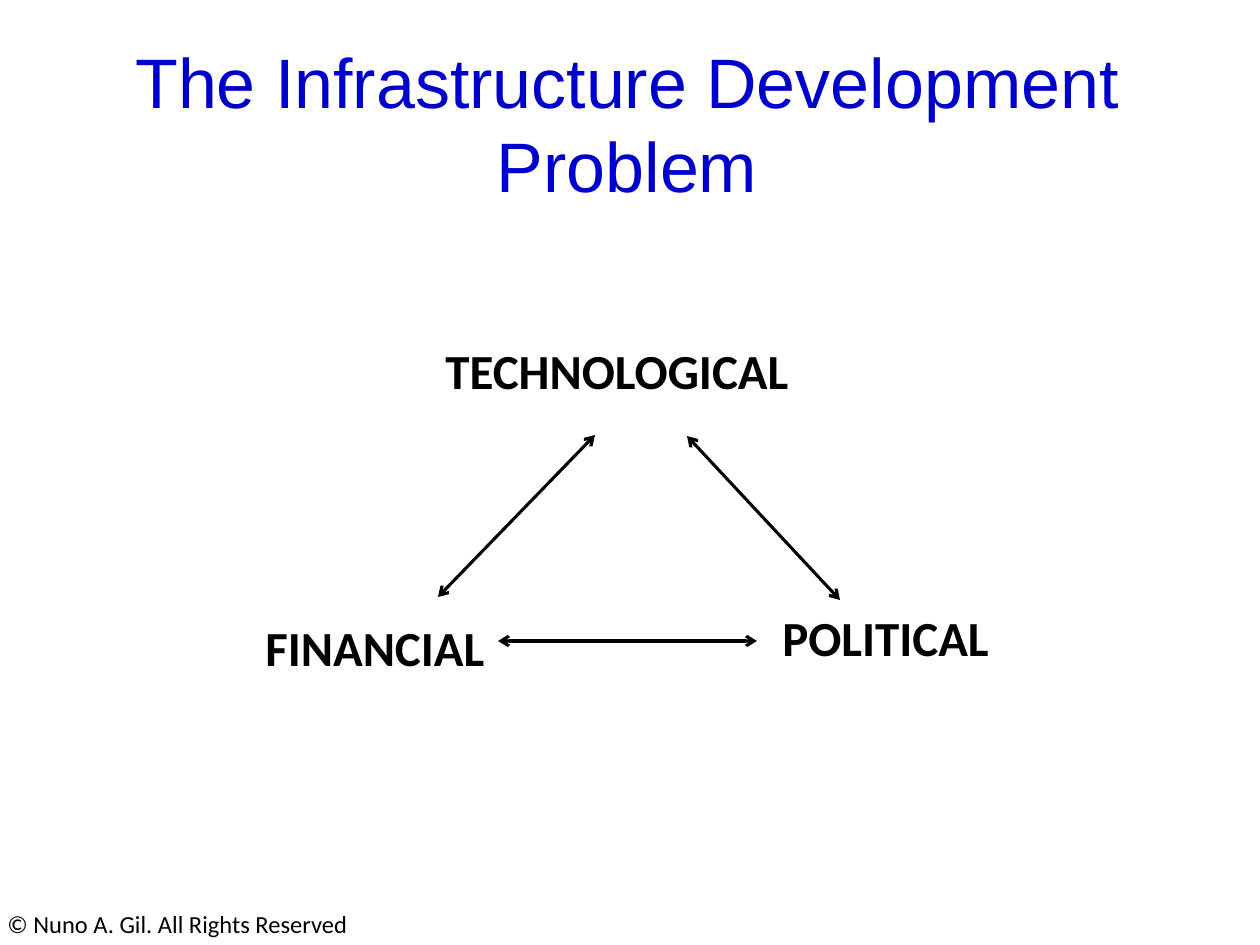
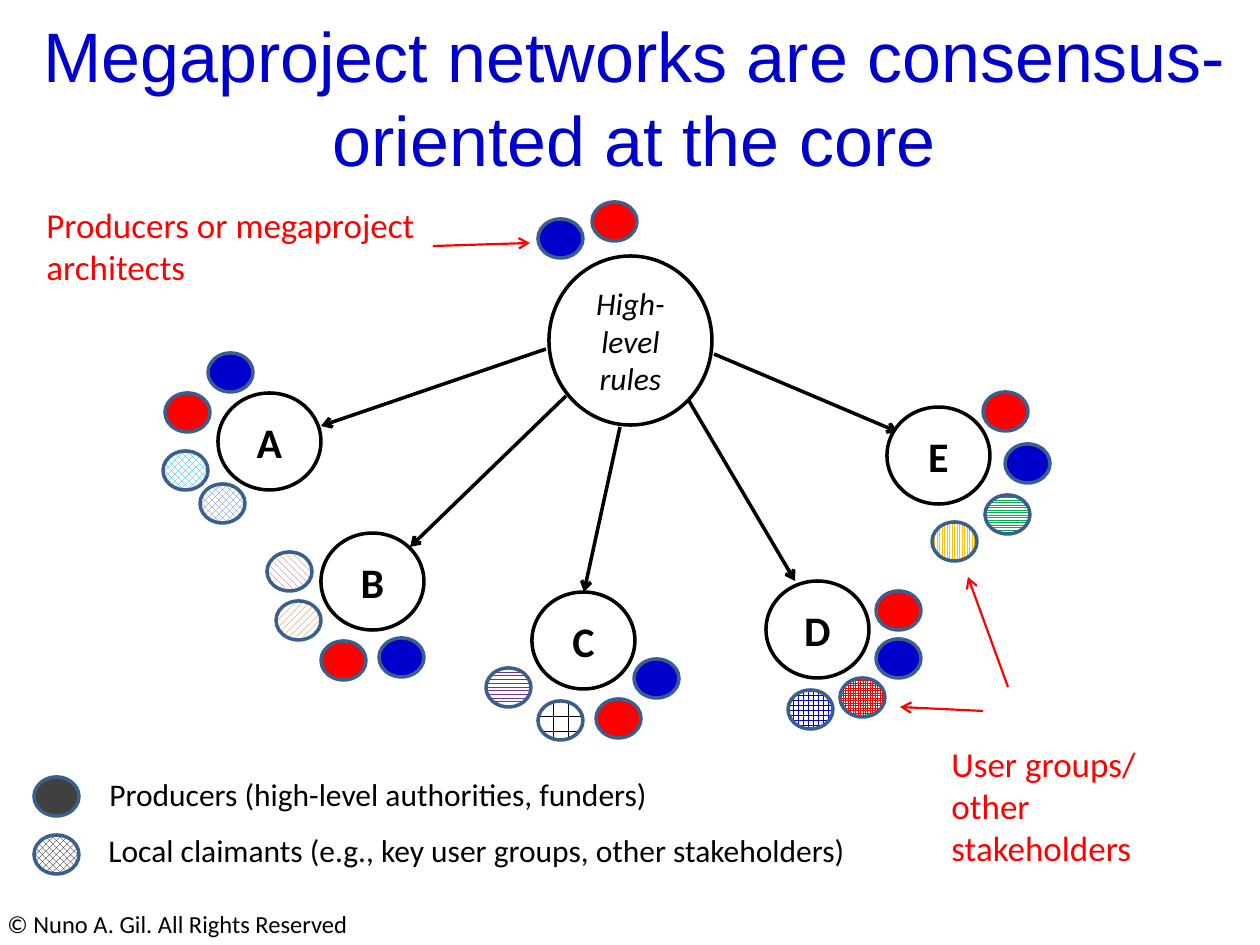
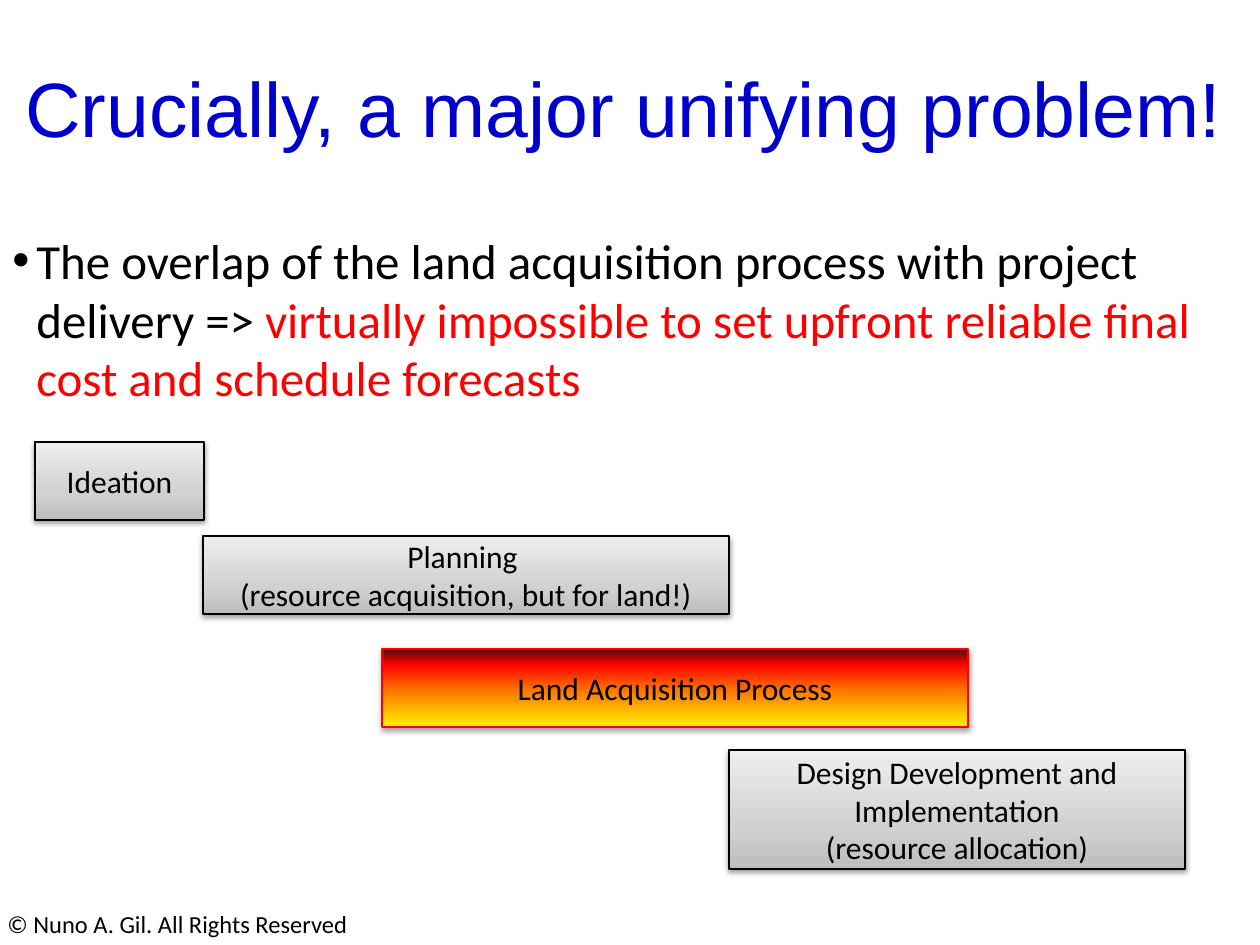
from lxml import etree
from pptx import Presentation, util as u
from pptx.dml.color import RGBColor
from pptx.enum import dml, shapes, text
from pptx.oxml import parse_xml
from pptx.oxml.ns import nsdecls, qn

PX = 914400 / 126
W, H = 1260, 945
C = dict(title="0000CC", black="000000", white="FFFFFF", red="FF0000", blue="0000CC",
         ring="3A5F8C", grey="404040", cyan="00B0F0", steel="4F81BD", brick="C0504D",
         orange="E46C0A", purple="7030A0", green="00B050", gold="FFC000")
FOOTER = "© Nuno A. Gil. All Rights Reserved"
MIDDLE, CENTER = text.MSO_ANCHOR.MIDDLE, text.PP_ALIGN.CENTER
PAT = dml.MSO_PATTERN

# Problem triangle
CORNERS = [("TECHNOLOGICAL", 433, 334, 407), ("POLITICAL", 770, 601, 307),
           ("FINANCIAL", 253, 611, 307)]
SIDES = [(687, 436, 840, 600), (595, 435, 438, 597), (757, 641, 498, 641)]

# Stakeholder network: a token is left, top, colour and, for local claimants, a pattern
HUB = ("High-level rules", 549, 256, 163, 169)
NODE_W, NODE_H = 103, 97
TOKEN_W, TOKEN_H = 45, 39
NODES = [("A", 218, 393), ("B", 321, 533), ("C", 532, 592), ("D", 766, 581), ("E", 887, 407)]
SPOKES = [(546, 349, 321, 426), (566, 396, 410, 547), (620, 427, 584, 592),
          (689, 401, 795, 581), (714, 354, 898, 432)]
PRODUCERS = {
    "red": [(592, 202), (165, 393), (321, 641), (596, 699), (876, 591), (983, 392)],
    "blue": [(538, 219), (208, 353), (379, 638), (634, 659), (876, 639), (1005, 444)],
    "grey": [(34, 777)],
}
CLAIMANTS = [
    (163, 451, "cyan", PAT.OUTLINED_DIAMOND), (200, 484, "steel", PAT.SOLID_DIAMOND),
    (267, 552, "brick", PAT.WIDE_DOWNWARD_DIAGONAL),
    (276, 601, "orange", PAT.WIDE_UPWARD_DIAGONAL),
    (486, 668, "purple", PAT.ZIG_ZAG), (538, 701, "black", PAT.HORIZONTAL_BRICK),
    (840, 678, "red", PAT.SMALL_GRID), (788, 690, "blue", PAT.LARGE_GRID),
    (985, 495, "green", PAT.LIGHT_HORIZONTAL), (932, 522, "gold", PAT.LIGHT_VERTICAL),
    (34, 835, "black", PAT.SOLID_DIAMOND),
]
LEGEND = [("Producers (high-level authorities, funders)", 97, 769),
          ("Local claimants (e.g., key user groups, other stakeholders)", 96, 825)]
CALLOUTS = [("Producers or megaproject\narchitects", 34, 197, 399, 97),
            ("User groups/\nother stakeholders", 939, 736, 271, 140)]
POINTERS = [(433, 246, 530, 243), (983, 711, 900, 707), (1008, 687, 968, 577)]

# Project phases
BULLET = [("The overlap of the land acquisition process with project delivery => ", "black"),
          ("virtually impossible to set upfront reliable final cost and schedule forecasts",
           "red")]
SILVER = [(0, "BDBDBD"), (35, "D1D1D1"), (100, "EEEEEE")]
FIRE = [(0, "FFF200"), (45, "FF7A00"), (80, "FF0300"), (100, "4D0808")]
PHASES = [
    ("Ideation", 35, 442, 169, 78, SILVER, "black"),
    ("Planning \n(resource acquisition, but for land!)", 203, 536, 526, 78, SILVER, "black"),
    ("Land Acquisition Process", 382, 649, 586, 78, FIRE, "red"),
    ("Design Development and Implementation\n(resource allocation)",
     729, 750, 456, 119, SILVER, "black"),
]


def px(*lengths):
    return [u.Emu(round(n * PX)) for n in lengths]


def rgb(name):
    return RGBColor.from_string(C[name])


def style(tf, size, color="black", font="Calibri", align=None, bold=None, italic=None):
    for p in tf.paragraphs:
        p.alignment = align
        for r in p.runs:
            f = r.font
            f.name, f.size, f.bold, f.italic = font, u.Pt(size), bold, italic
            f.color.rgb = rgb(color)


def add_text(s, words, x, y, w, h, size, color="black", **kw):
    tf = s.shapes.add_textbox(*px(x, y, w, h)).text_frame
    tf.word_wrap = True
    tf.text = words
    style(tf, size, color, **kw)
    return tf


def add_slide(prs, title, x, y, w, h, size=40):
    s = prs.slides.add_slide(prs.slide_layouts[5])
    sp = s.shapes.title
    sp.left, sp.top, sp.width, sp.height = px(x, y, w, h)
    tf = sp.text_frame
    tf.text = title
    tf.auto_size = text.MSO_AUTO_SIZE.NONE
    tf.vertical_anchor = MIDDLE
    style(tf, size, "title", "Arial", CENTER)
    add_text(s, FOOTER, -5, 903, 1265, 43, 14)
    return s


def add_arrow(s, ends, color, width, both=False):
    sp = s.shapes.add_connector(shapes.MSO_CONNECTOR.STRAIGHT, *px(*ends))
    sp.line.color.rgb = rgb(color)
    sp.line.width = u.Pt(width)
    ln = sp.line._get_or_add_ln()
    for tag in ("a:headEnd", "a:tailEnd") if both else ("a:tailEnd",):
        etree.SubElement(ln, qn(tag), type="arrow")
    etree.SubElement(sp._element.spPr, qn("a:effectLst"))


def add_ellipse(s, x, y, w, h, color="white", line="black", pattern=None):
    sp = s.shapes.add_shape(shapes.MSO_SHAPE.OVAL, *px(x, y, w, h))
    sp.shadow.inherit = False
    if pattern is None:
        sp.fill.solid()
    else:
        sp.fill.patterned()
        sp.fill.pattern = pattern
        sp.fill.back_color.rgb = rgb("white")
    sp.fill.fore_color.rgb = rgb(color)
    sp.line.color.rgb = rgb(line)
    sp.line.width = u.Pt(2)
    return sp


def label(sp, words, size, **kw):
    tf = sp.text_frame
    tf.word_wrap = True
    tf.vertical_anchor = MIDDLE
    tf.text = words
    style(tf, size, align=CENTER, **kw)


def add_phase(s, words, x, y, w, h, stops, line):
    """Box with an upward gradient and a soft shadow below."""
    sp = s.shapes.add_shape(shapes.MSO_SHAPE.RECTANGLE, *px(x, y, w, h))
    gs = "".join(f'<a:gs pos="{pos * 1000}"><a:srgbClr val="{hue}"/></a:gs>'
                 for pos, hue in stops)
    spPr = sp._element.spPr
    spPr.append(parse_xml(f'<a:gradFill {nsdecls("a")}><a:gsLst>{gs}</a:gsLst>'
                          '<a:lin ang="16200000" scaled="0"/></a:gradFill>'))
    sp.line.color.rgb = rgb(line)
    sp.line.width = u.Pt(0.75)
    spPr.append(parse_xml(
        f'<a:effectLst {nsdecls("a")}><a:outerShdw blurRad="40000" dist="20000" dir="5400000" '
        'rotWithShape="0"><a:srgbClr val="000000"><a:alpha val="38000"/></a:srgbClr>'
        '</a:outerShdw></a:effectLst>'))
    label(sp, words, 18)


def triangle_slide(prs):
    s = add_slide(prs, "The Infrastructure Development Problem", -3, 71, W, 103)
    for words, x, y, w in CORNERS:
        add_text(s, words, x, y, w, 72, 28, bold=True)
    for ends in SIDES:
        add_arrow(s, ends, "black", 1.75, both=True)


def network_slide(prs):
    s = add_slide(prs, "Megaproject networks are consensus-oriented at the core", 4, 55, W, 83)
    hub, *box = HUB
    label(add_ellipse(s, *box), hub, 18, italic=True)
    for ends in SPOKES:
        add_arrow(s, ends, "black", 2)
    for name, x, y in NODES:
        label(add_ellipse(s, x, y, NODE_W, NODE_H), name, 24, bold=True)
    solid = [(x, y, color, None) for color, spots in PRODUCERS.items() for x, y in spots]
    for x, y, color, pattern in solid + CLAIMANTS:
        add_ellipse(s, x, y, TOKEN_W, TOKEN_H, color, "ring", pattern)
    for words, x, y in LEGEND:
        add_text(s, words, x, y, 860, 50, 18)
    for callout in CALLOUTS:
        add_text(s, *callout, 20, "red")
    for ends in POINTERS:
        add_arrow(s, ends, "red", 1.25)


def phases_slide(prs):
    s = add_slide(prs, "Crucially, a major unifying problem!", -6, 55, W, 103, 44)
    p = add_text(s, "", 0, 224, W, 190, 28).paragraphs[0]
    for words, color in BULLET:
        r = p.add_run()
        r.text = words
        r.font.name, r.font.size = "Calibri", u.Pt(28)
        r.font.color.rgb = rgb(color)
    indent, = px(24)
    pPr = p._p.get_or_add_pPr()
    pPr.set("marL", str(indent))
    pPr.set("indent", str(-indent))
    etree.SubElement(pPr, qn("a:buFont"), typeface="Arial")
    etree.SubElement(pPr, qn("a:buChar"), char="•")
    for phase in PHASES:
        add_phase(s, *phase)


def main():
    prs = Presentation()
    prs.slide_width, prs.slide_height = px(W, H)
    triangle_slide(prs)
    network_slide(prs)
    phases_slide(prs)
    prs.save("out.pptx")


if __name__ == "__main__":
    main()
